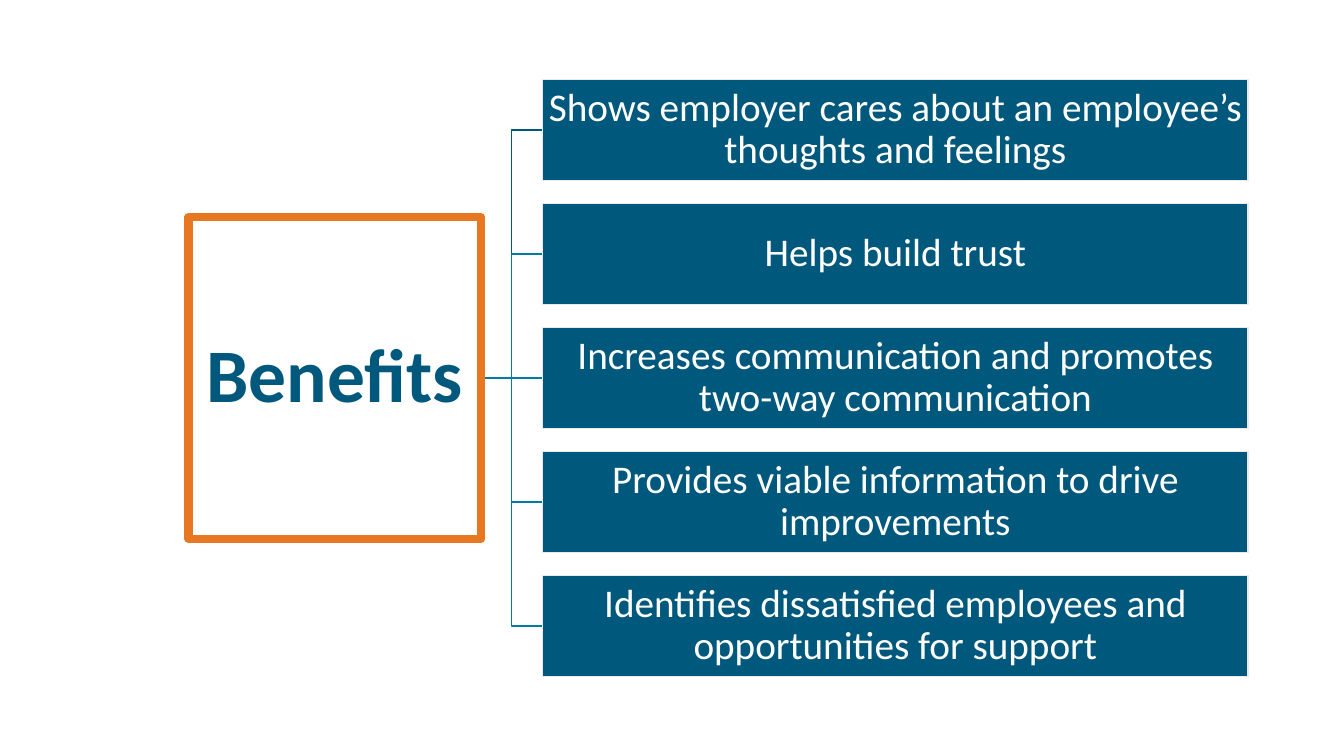
from lxml import etree
from pptx import Presentation
from pptx.dml.color import RGBColor
from pptx.enum.shapes import MSO_CONNECTOR, MSO_SHAPE
from pptx.enum.text import MSO_ANCHOR, MSO_AUTO_SIZE, PP_ALIGN
from pptx.oxml.ns import qn
from pptx.util import Inches, Pt

RECT = MSO_SHAPE.RECTANGLE
ELBOW, STRAIGHT = MSO_CONNECTOR.ELBOW, MSO_CONNECTOR.STRAIGHT
MIDDLE, CENTER, FIXED = MSO_ANCHOR.MIDDLE, PP_ALIGN.CENTER, MSO_AUTO_SIZE.NONE

ROOT = "Benefits"
BENEFITS = [
    "Shows employer cares about an employee’s thoughts and feelings",
    "Helps build trust",
    "Increases communication and promotes two-way communication",
    "Provides viable information to drive improvements",
    "Identifies dissatisfied employees and opportunities for support",
]
COLORS = {"navy": "00587C", "teal": "007BA3", "orange": "E87722",
          "pale": "EBE9EA", "white": "FFFFFF"}

WIDE, HIGH = 13.33, 7.5
MID = HIGH / 2
ROOT_X, ROOT_W, ROOT_H = 1.87, 2.9, 3.19
BOX_X, BOX_W, BOX_H, STEP = 5.38, 7, 1, 1.23


def color(name):
    return RGBColor.from_string(COLORS[name])


def outline(line, name, width):
    line.color.rgb = color(name)
    line.width = Pt(width)


def dress(shape, text, size, ink, fill, edge, width, inset, bold=False):
    """Fill and outline a box and write its centred text."""
    shape.fill.solid()
    shape.fill.fore_color.rgb = color(fill)
    outline(shape.line, edge, width)
    frame = shape.text_frame
    frame.word_wrap = True
    frame.auto_size = FIXED
    frame.vertical_anchor = MIDDLE
    frame.margin_left = frame.margin_right = Inches(inset)
    frame.margin_top = frame.margin_bottom = Inches(inset)
    para = frame.paragraphs[0]
    para.alignment = CENTER
    para.line_spacing = 0.9
    run = para.add_run()
    run.text = text
    run.font.name = "Calibri"
    run.font.size = Pt(size)
    run.font.bold = bold
    run.font.color.rgb = color(ink)


deck = Presentation()
deck.slide_width, deck.slide_height = Inches(WIDE), Inches(HIGH)
slide = deck.slides.add_slide(deck.slide_layouts[5])
shapes = slide.shapes

first = MID - STEP * (len(BENEFITS) - 1) / 2
for row, text in enumerate(BENEFITS):
    y = first + row * STEP
    link = shapes.add_connector(
        STRAIGHT if y == MID else ELBOW,
        Inches(ROOT_X + ROOT_W), Inches(MID), Inches(BOX_X), Inches(y))
    outline(link.line, "teal" if row else "navy", 1)
    etree.SubElement(link._element.spPr, qn("a:effectLst"))

    box = shapes.add_shape(RECT, Inches(BOX_X), Inches(y - BOX_H / 2),
                           Inches(BOX_W), Inches(BOX_H))
    box.shadow.inherit = False
    dress(box, text, 28, "white", "navy", "pale", 1, 0.02)

root = shapes.title
root.left, root.top = Inches(ROOT_X), Inches(MID - ROOT_H / 2)
root.width, root.height = Inches(ROOT_W), Inches(ROOT_H)
dress(root, ROOT, 54, "navy", "white", "orange", 6, 0.04, True)
# The root box covers the ends of the connectors.
shapes._spTree.append(root._element)

deck.save("out.pptx")
